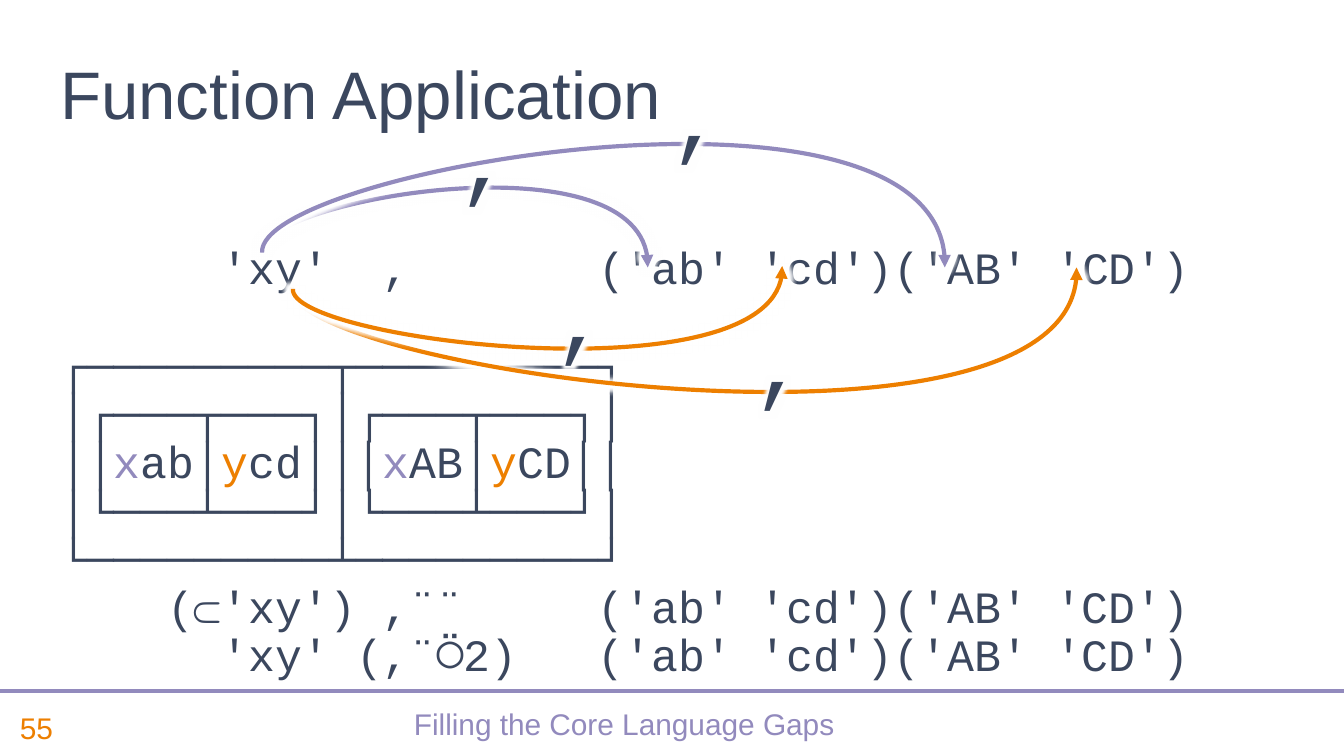
from lxml import etree
from pptx import Presentation
from pptx.dml.color import RGBColor
from pptx.enum.shapes import MSO_CONNECTOR
from pptx.enum.text import MSO_ANCHOR as ANCHOR, PP_ALIGN as ALIGN
from pptx.oxml.ns import qn
from pptx.util import Inches, Pt

NAVY, PURPLE, ORANGE = "3B475E", "928ABD", "ED7F00"
MONO = "Courier New"


def add_text(lines, at, size, font="Arial", color=NAVY, anchor=ANCHOR.TOP,
             align=ALIGN.LEFT, spacing=None, wrap=True):
    """Add a text box; each line is a string or a list of (text, color) runs."""
    sp = slide.shapes.add_textbox(*map(Inches, at))
    tf = sp.text_frame
    tf.word_wrap = wrap
    tf.vertical_anchor = anchor
    for i, line in enumerate(lines):
        p = tf.paragraphs[0] if i == 0 else tf.add_paragraph()
        p.alignment = align
        p.line_spacing = spacing
        for text, run_color in [(line, color)] if isinstance(line, str) else line:
            r = p.add_run()
            r.text = text
            r.font.size, r.font.name = Pt(size), font
            r.font.color.rgb = RGBColor.from_string(run_color)
    return sp


def add_white_glow(effects, radius):
    glow = etree.SubElement(effects, qn("a:glow"), rad=str(Pt(radius)))
    etree.SubElement(glow, qn("a:srgbClr"), val="FFFFFF")


prs = Presentation()
prs.slide_width, prs.slide_height = Inches(10), Inches(5.625)
slide = prs.slides.add_slide(prs.slide_layouts[6])

# Footer
add_text(["Filling the Core Language Gaps"], (0.78, 5.19, 7.73, 0.44), 16,
         color=PURPLE, anchor=ANCHOR.MIDDLE, align=ALIGN.CENTER, spacing=0.8)
add_text(["55"], (0.05, 5.19, 0.73, 0.44), 16, color=ORANGE, anchor=ANCHOR.MIDDLE)
rule = slide.shapes.add_connector(MSO_CONNECTOR.STRAIGHT, 0, Inches(5.14),
                                  Inches(10), Inches(5.14))
rule.line.color.rgb, rule.line.width = RGBColor.from_string(PURPLE), Pt(2.25)
etree.SubElement(rule._element.spPr, qn("a:effectLst"))

# Code and title
code = add_text([
    "      'xy'  ,       ('ab' 'cd')('AB' 'CD')",
    "┌─────────┬─────────┐",
    "│┌───┬───┐│┌───┬───┐│",
    [("││", NAVY), ("x", PURPLE), ("ab│", NAVY), ("y", ORANGE), ("cd│││", NAVY),
     ("x", PURPLE), ("AB│", NAVY), ("y", ORANGE), ("CD││", NAVY)],
    "│└───┴───┘│└───┴───┘│",
    "└─────────┴─────────┘",
    "    (⊂'xy') ,¨¨     ('ab' 'cd')('AB' 'CD')",
    "      'xy' (,¨⍥2)   ('ab' 'cd')('AB' 'CD')",
], (0.35, 1.78, 9.33, 3.94), 24, font=MONO, spacing=0.9)
code.text_frame.paragraphs[1].space_before = Pt(26)
add_text(["Function Application"], (0.35, 0.29, 7.66, 0.75), 36, anchor=ANCHOR.BOTTOM)

# Curved arrows: start, two control points, end
arrows = [
    (PURPLE, [(1.95, 1.87), (1.93, 1.49), (4.85, 0.98), (4.82, 1.99)]),
    (PURPLE, [(1.95, 1.88), (1.91, 1.27), (7.08, 0.37), (7.03, 1.99)]),
    (ORANGE, [(2.17, 2.14), (2.12, 2.74), (8.08, 3.6), (8.01, 1.99)]),
    (ORANGE, [(2.18, 2.15), (2.14, 2.53), (5.86, 2.99), (5.82, 1.98)]),
]
STEPS = 40
for color, points in arrows:
    points = [(Inches(x), Inches(y)) for x, y in points]
    curve = []
    for step in range(STEPS + 1):
        t = step / STEPS
        weights = ((1 - t) ** 3, 3 * t * (1 - t) ** 2, 3 * t * t * (1 - t), t ** 3)
        curve.append([round(sum(w * pt[axis] for w, pt in zip(weights, points)))
                      for axis in (0, 1)])
    builder = slide.shapes.build_freeform(*curve[0])
    builder.add_line_segments(curve[1:], close=False)
    sp = builder.convert_to_shape()
    sp.shadow.inherit = False
    add_white_glow(sp._element.spPr.find(qn("a:effectLst")), 5)
    sp.fill.background()
    sp.line.color.rgb, sp.line.width = RGBColor.from_string(color), Pt(2.25)
    etree.SubElement(sp.line._get_or_add_ln(), qn("a:tailEnd"), type="triangle")

    # The sampled points fix the frame; one true Bezier segment replaces them
    outline = sp._element.spPr.find(".//" + qn("a:path"))
    for segment in outline.findall(qn("a:lnTo")):
        outline.remove(segment)
    bezier = etree.SubElement(outline, qn("a:cubicBezTo"))
    for x, y in points[1:]:
        etree.SubElement(bezier, qn("a:pt"), x=str(x - sp.left), y=str(y - sp.top))

# Commas on the arrows, with a white glow that breaks the line
for x, y in [(3.31, 0.71), (4.89, 0.4), (4.03, 1.89), (5.51, 2.23)]:
    sp = add_text([","], (x, y, 0.57, 0.91), 48, font=MONO, wrap=False)
    run_format = sp.text_frame.paragraphs[0].runs[0]._r.rPr
    effects = etree.Element(qn("a:effectLst"))
    run_format.find(qn("a:solidFill")).addnext(effects)
    add_white_glow(effects, 8)

prs.save("out.pptx")
